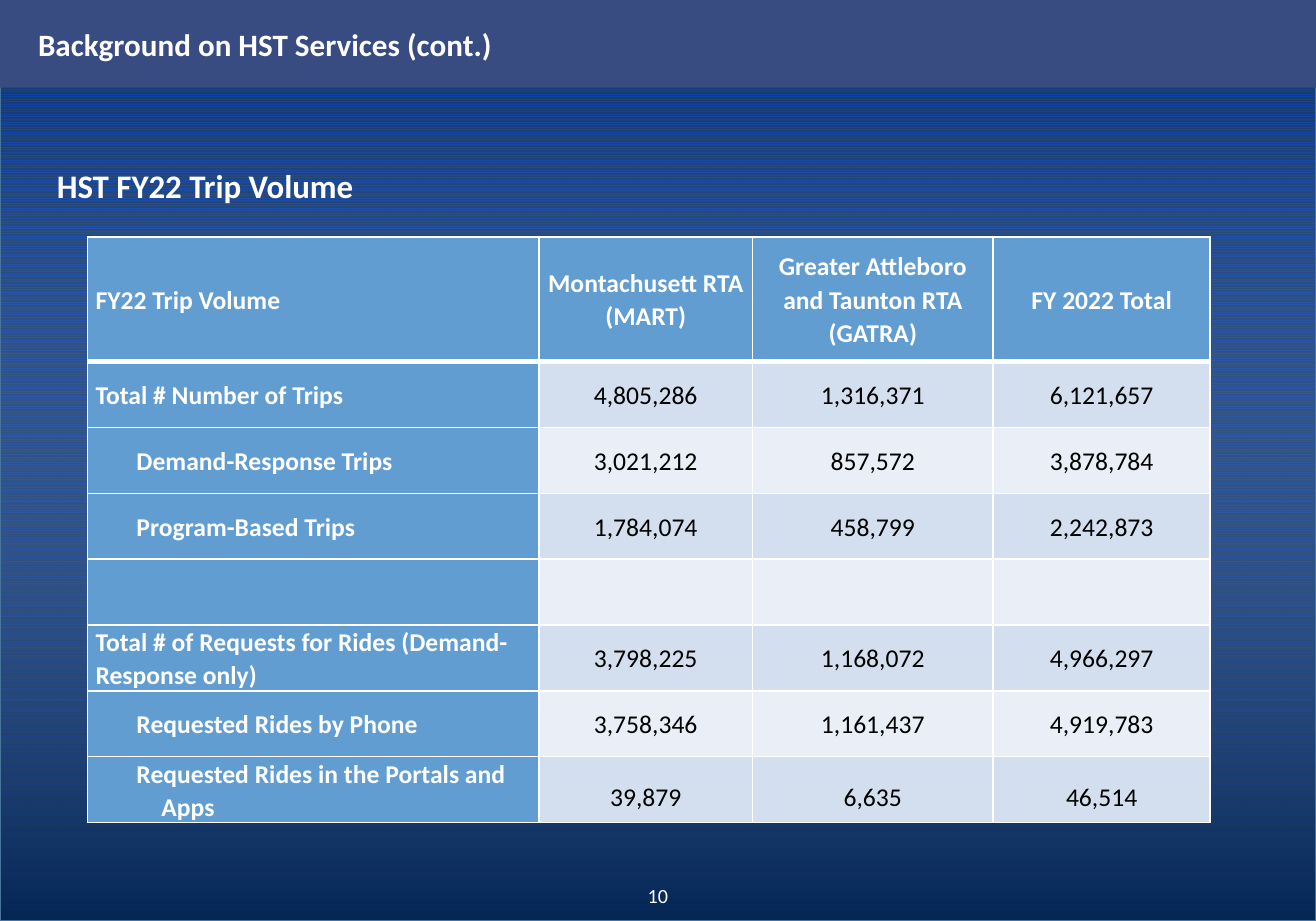
from lxml import etree
from pptx import Presentation
from pptx import util as u
from pptx.dml.color import RGBColor
from pptx.enum import dml, shapes, text
from pptx.oxml import parse_xml
from pptx.oxml.ns import nsdecls, qn

WHITE = RGBColor(0xFF, 0xFF, 0xFF)
BLACK = RGBColor(0x00, 0x00, 0x00)
STRIPE = RGBColor(0x00, 0x33, 0x99)
NAVY = RGBColor(0x07, 0x2C, 0x62)
DEEP = RGBColor(0x06, 0x27, 0x56)
PALE = RGBColor(0xB6, 0xD1, 0xFA)
EDGE = RGBColor(0x49, 0x74, 0x9B)
BAR = RGBColor(0x38, 0x4C, 0x81)
GLOW = RGBColor(0x0E, 0x58, 0xC4)
HEAD = RGBColor(0x62, 0x9D, 0xD1)
BANDS = (RGBColor(0xD3, 0xDF, 0xEE), RGBColor(0xEA, 0xEF, 0xF7))

WIDTH, HEIGHT = 720, 504
COLUMNS = (247, 116.7, 131.8, 118.7)
HEADER_HEIGHT, ROW_HEIGHT = 68.4, 36
SUB_INDENT = 22.4
HEADERS = ("FY22 Trip Volume", "Montachusett RTA (MART)",
           "Greater Attleboro and Taunton RTA (GATRA)", "FY 2022 Total")
ROWS = (
    ("Total # Number of Trips", "4,805,286", "1,316,371", "6,121,657"),
    ("Demand-Response Trips", "3,021,212", "857,572", "3,878,784"),
    ("Program-Based Trips", "1,784,074", "458,799", "2,242,873"),
    ("", "", "", ""),
    ("Total # of Requests for Rides (Demand-Response only)",
     "3,798,225", "1,168,072", "4,966,297"),
    ("Requested Rides by Phone", "3,758,346", "1,161,437", "4,919,783"),
    ("Requested Rides in the Portals and Apps", "39,879", "6,635", "46,514"),
)
SUB_ROWS = (2, 3, 6, 7)
LAST_ROW = len(ROWS)


class Deck:
    font = "Calibri"

    def __init__(self):
        self.prs = Presentation()
        self.prs.slide_width, self.prs.slide_height = u.Pt(WIDTH), u.Pt(HEIGHT)
        self.s = self.prs.slides.add_slide(self.prs.slide_layouts[5])

    def run(self, p, words, size, color=WHITE, bold=False):
        r = p.add_run()
        r.text = words
        r.font.name, r.font.size, r.font.bold = self.font, u.Pt(size), bold
        r.font.color.rgb = color

    def indent(self, p, left, first=0):
        pPr = p._p.get_or_add_pPr()
        pPr.set("marL", str(u.Pt(left)))
        pPr.set("indent", str(u.Pt(first)))

    def background(self):
        fill = self.s.background.fill
        fill.patterned()
        fill.pattern = dml.MSO_PATTERN.LIGHT_HORIZONTAL
        fill.fore_color.rgb, fill.back_color.rgb = STRIPE, NAVY
        sp = self.s.shapes.add_shape(shapes.MSO_SHAPE.RECTANGLE, 0, 0,
                                     u.Pt(WIDTH), u.Pt(HEIGHT))
        sp.shadow.inherit = False
        sp.fill.gradient()
        sp.fill.gradient_angle = 90
        for stop, color, position in zip(sp.fill.gradient_stops, (DEEP, PALE), (0, 1)):
            stop.color.rgb, stop.position = color, position
        clear = sp._element.xpath(".//a:gs[2]/a:srgbClr")[0]
        etree.SubElement(clear, qn("a:alpha")).set("val", "0")
        sp.line.color.rgb, sp.line.width = EDGE, u.Pt(1.5)
        self.s.shapes._spTree.insert(2, sp._element)

    def title(self, words, height):
        sp = self.s.shapes.title
        sp.left, sp.top, sp.width, sp.height = 0, 0, u.Pt(WIDTH), u.Pt(height)
        sp.fill.solid()
        sp.fill.fore_color.rgb = BAR
        sp.shadow.inherit = False
        sp._element.spPr.find(qn("a:effectLst")).append(parse_xml(
            f'<a:outerShdw {nsdecls("a")} blurRad="{u.Pt(4)}" dist="{u.Pt(2)}" '
            f'dir="5400000"><a:srgbClr val="{GLOW}"><a:alpha val="9000"/>'
            '</a:srgbClr></a:outerShdw>'))
        tf = sp.text_frame
        tf.auto_size = text.MSO_AUTO_SIZE.NONE
        tf.vertical_anchor = text.MSO_ANCHOR.MIDDLE
        p = tf.paragraphs[0]
        p.alignment = text.PP_ALIGN.LEFT
        self.indent(p, 13.6)
        self.run(p, words, 17, bold=True)

    def label(self, words, x, y, w, h, size, align=text.PP_ALIGN.LEFT, bold=False):
        tf = self.s.shapes.add_textbox(u.Pt(x), u.Pt(y), u.Pt(w), u.Pt(h)).text_frame
        tf.word_wrap = True
        p = tf.paragraphs[0]
        p.alignment = align
        self.run(p, words, size, bold=bold)

    def cell(self, cell, words, fill, color, bold, align, spacing, bottom):
        cell.margin_left = cell.margin_right = u.Pt(4.3)
        cell.margin_top = cell.margin_bottom = 0
        cell.vertical_anchor = text.MSO_ANCHOR.MIDDLE
        tcPr = cell._tc.get_or_add_tcPr()
        for side, width in (("L", 1), ("R", 1), ("T", 1), ("B", bottom)):
            tcPr.append(parse_xml(
                f'<a:ln{side} {nsdecls("a")} w="{u.Pt(width)}"><a:solidFill>'
                f'<a:srgbClr val="{WHITE}"/></a:solidFill></a:ln{side}>'))
        cell.fill.solid()
        cell.fill.fore_color.rgb = fill
        p = cell.text_frame.paragraphs[0]
        p.alignment, p.line_spacing = align, spacing
        if words:
            self.run(p, words, 14, color, bold)
        return p

    def table(self, x, y):
        height = HEADER_HEIGHT + ROW_HEIGHT * len(ROWS)
        tbl = self.s.shapes.add_table(len(ROWS) + 1, len(COLUMNS), u.Pt(x), u.Pt(y),
                                      u.Pt(sum(COLUMNS)), u.Pt(height)).table
        for column, width in zip(tbl.columns, COLUMNS):
            column.width = u.Pt(width)
        for i, values in enumerate((HEADERS,) + ROWS):
            tbl.rows[i].height = u.Pt(ROW_HEIGHT if i else HEADER_HEIGHT)
            for j, words in enumerate(values):
                heading = i == 0 or j == 0
                p = self.cell(
                    tbl.cell(i, j), words,
                    fill=HEAD if heading else BANDS[(i - 1) % 2],
                    color=WHITE if heading else BLACK,
                    bold=heading,
                    align=text.PP_ALIGN.CENTER if j else text.PP_ALIGN.LEFT,
                    spacing=1.5 if i == LAST_ROW and j else 1.07,
                    bottom=1 if i else 3)
                if j == 0 and i in SUB_ROWS:
                    self.indent(p, 36, SUB_INDENT - 36)


def main():
    deck = Deck()
    deck.background()
    deck.title("Background on HST Services (cont.)", 48)
    deck.label("10", 300, 480, 120, 24, 11, text.PP_ALIGN.CENTER)
    deck.table(48, 129.6)
    deck.label("HST FY22 Trip Volume", 24, 87, 638.6, 29, 18, bold=True)
    deck.prs.save("out.pptx")


if __name__ == "__main__":
    main()
